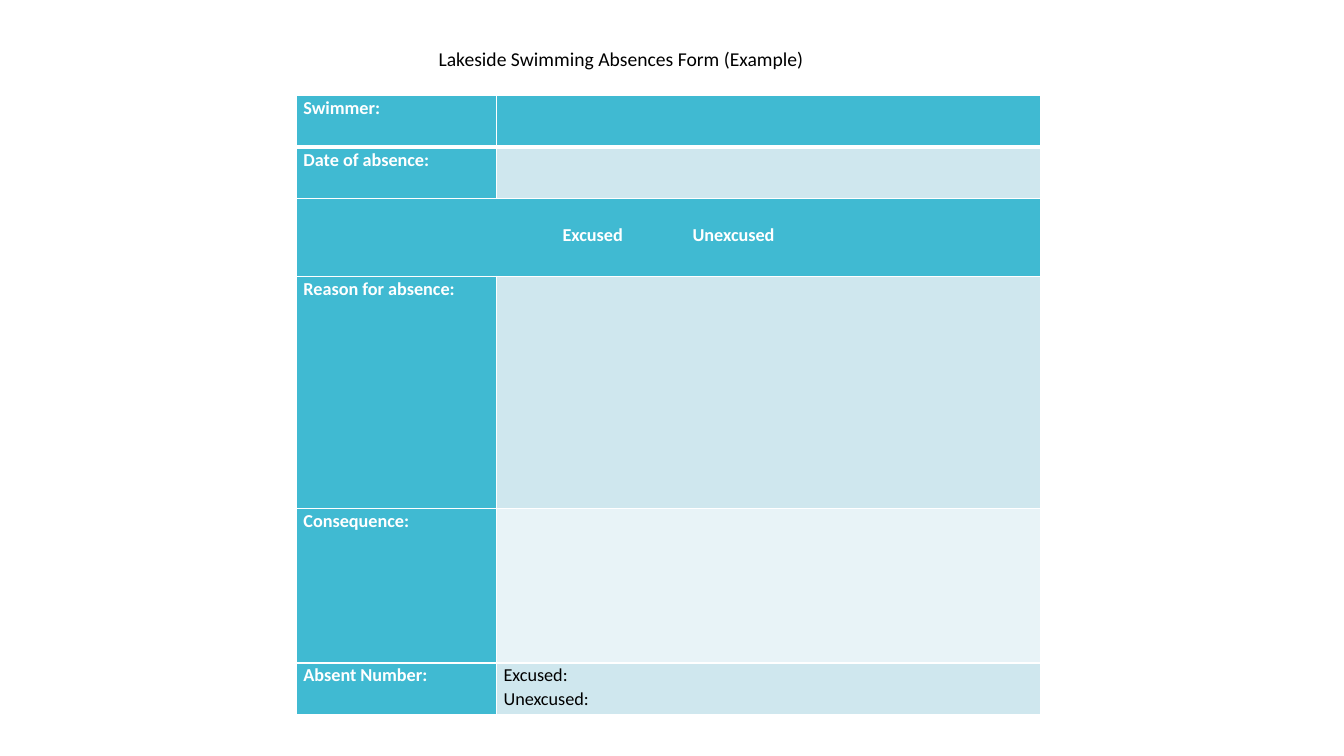
import pptx
import pptx.util
import pptx.dml.color
import pptx.enum.text
import pptx.oxml
import pptx.oxml.ns
import lxml.etree

COLORS = {"label": "40BAD2", "band": "CFE7EE", "pale": "E8F3F7",
          "white": "FFFFFF", "ink": "000000"}
FONT = "Calibri"
WIDTH, HEIGHT = 13.33, 7.5
ROW_UNITS = [2, 2, 3, 9, 6, 2]
COLUMN_SHARES = [0.269, 0.731]
CHOICE_ROW = 2
CHOICE_GAP = 47  # points between the two choices

# Label, answer lines, answer fill
FORM_ROWS = [
    ("Swimmer:", "", "label"),
    ("Date of absence:", "", "band"),
    ("Excused Unexcused", "", "label"),
    ("Reason for absence:", "", "band"),
    ("Consequence:", "", "pale"),
    ("Absent Number:", "Excused:\nUnexcused:", "band"),
]


def rgb(name):
    return pptx.dml.color.RGBColor.from_string(COLORS[name])


def style_span(span, size, color, bold=False):
    span.font.name = FONT
    span.font.size = pptx.util.Pt(size)
    span.font.bold = bold
    span.font.color.rgb = rgb(color)


def add_borders(cell, row):
    """White rules, thicker under the first row."""
    props = cell._tc.get_or_add_tcPr()
    heavy = {(0, "B"), (1, "T")}
    for side in "LRTB":
        points = 3 if (row, side) in heavy else 1
        line = lxml.etree.SubElement(props, pptx.oxml.ns.qn(f"a:ln{side}"),
                                     w=str(pptx.util.Pt(points)))
        fill = lxml.etree.SubElement(line, pptx.oxml.ns.qn("a:solidFill"))
        lxml.etree.SubElement(fill, pptx.oxml.ns.qn("a:srgbClr"), val=COLORS["white"])


def fill_cell(cell, row, text, fill, color, bold):
    add_borders(cell, row)
    cell.fill.solid()
    cell.fill.fore_color.rgb = rgb(fill)
    cell.margin_left = cell.margin_right = pptx.util.Inches(0.07)
    cell.margin_top = cell.margin_bottom = 0
    cell.text_frame.text = text
    for para in cell.text_frame.paragraphs:
        para.line_spacing = 1.07
        para.font.size = pptx.util.Pt(13)
        for span in para.runs:
            style_span(span, 13, color, bold)


def fill_choices(cell):
    """Centre the two choices, held apart by one widely spaced blank."""
    para = cell.text_frame.paragraphs[0]
    first, second = para.text.split()
    para.text = first
    para.add_run().text = " "
    para.add_run().text = second
    para.alignment = pptx.enum.text.PP_ALIGN.CENTER
    cell.vertical_anchor = pptx.enum.text.MSO_ANCHOR.MIDDLE
    cell.margin_bottom = pptx.util.Inches(0.05)
    for span in para.runs:
        style_span(span, 13, "white", True)
    para.runs[1]._r.get_or_add_rPr().set("spc", str(CHOICE_GAP * 100))


def place_title(page, box):
    title = page.shapes.title
    title.left, title.top, title.width, title.height = map(pptx.util.Inches, box)
    frame = title.text_frame
    frame.text = "Lakeside Swimming Absences Form (Example)"
    frame.word_wrap = False
    frame.auto_size = pptx.enum.text.MSO_AUTO_SIZE.SHAPE_TO_FIT_TEXT
    frame.vertical_anchor = pptx.enum.text.MSO_ANCHOR.MIDDLE
    para = frame.paragraphs[0]
    para.alignment = pptx.enum.text.PP_ALIGN.LEFT
    style_span(para.runs[0], 14, "ink")


def place_form(page, box):
    left, top, width, height = map(pptx.util.Inches, box)
    table = page.shapes.add_table(len(FORM_ROWS), len(COLUMN_SHARES),
                                  left, top, width, height).table
    for column, share in zip(table.columns, COLUMN_SHARES):
        column.width = int(width * share)
    for row, units in zip(table.rows, ROW_UNITS):
        row.height = int(height * units / sum(ROW_UNITS))
    for row, (label, answer, fill) in enumerate(FORM_ROWS):
        fill_cell(table.cell(row, 0), row, label, "label", "white", True)
        fill_cell(table.cell(row, 1), row, answer, fill, "ink", False)
    choices = table.cell(CHOICE_ROW, 0)
    choices.merge(table.cell(CHOICE_ROW, 1))
    fill_choices(choices)


def main():
    deck = pptx.Presentation()
    deck.slide_width = pptx.util.Inches(WIDTH)
    deck.slide_height = pptx.util.Inches(HEIGHT)
    page = deck.slides.add_slide(deck.slide_layouts[5])
    place_title(page, (4.25, 0.41, 3.89, 0.34))
    place_form(page, (2.94, 0.95, 7.38, 6.14))
    deck.save("out.pptx")


if __name__ == "__main__":
    main()
